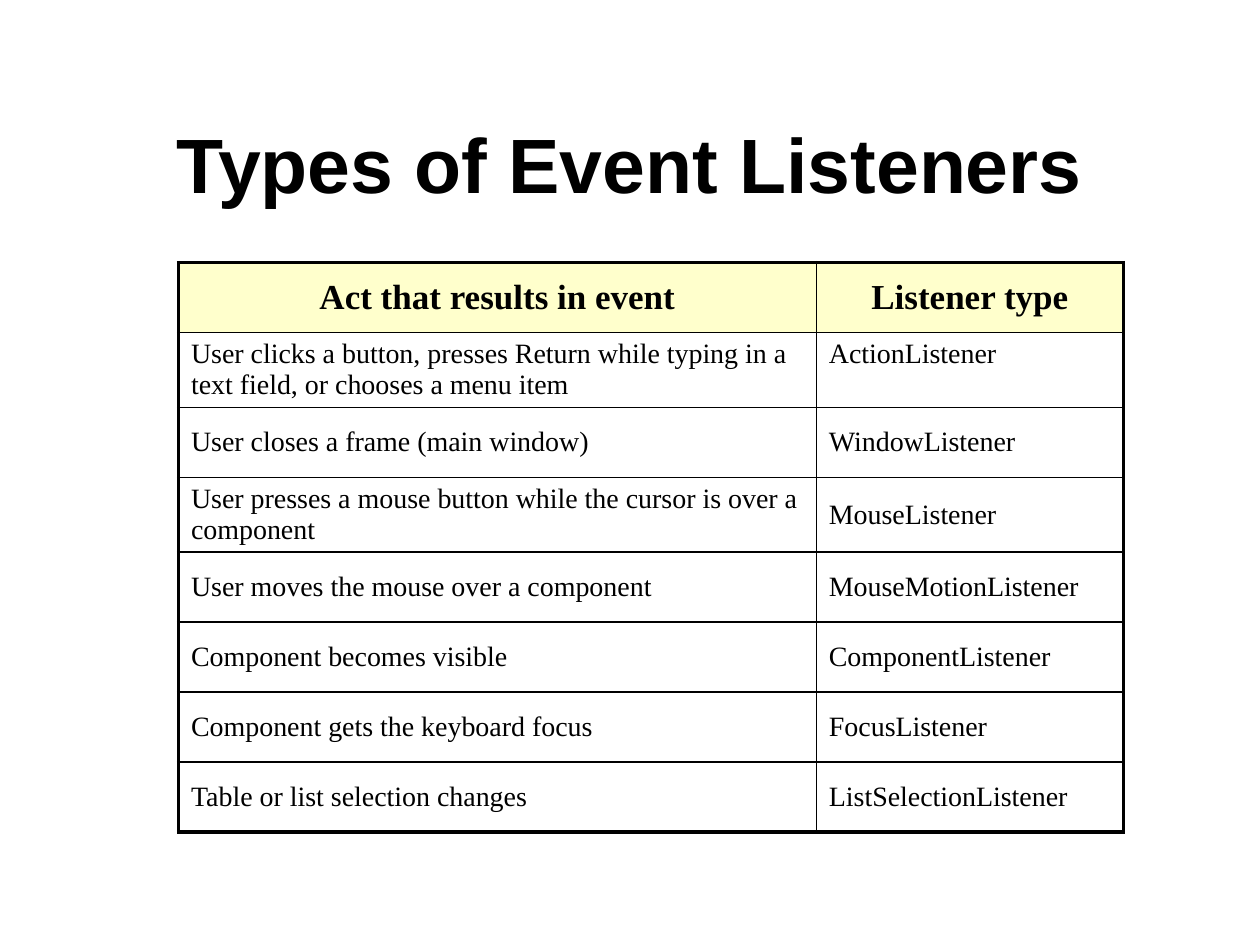
from lxml import etree
from pptx import Presentation, util as u
from pptx.dml.color import RGBColor
from pptx.enum import text
from pptx.oxml.ns import qn

BLACK = RGBColor(0x00, 0x00, 0x00)
WHITE = RGBColor(0xFF, 0xFF, 0xFF)
CREAM = RGBColor(0xFF, 0xFF, 0xCC)
THIN, THICK = 1, 2.25
ROW_HEIGHT = 40  # points

HEADER = ("Act that results in event", "Listener type")
LISTENERS = [
    ("User clicks a button, presses Return while typing in a text field, "
     "or chooses a menu item", "ActionListener"),
    ("User closes a frame (main window)", "WindowListener"),
    ("User presses a mouse button while the cursor is over a component",
     "MouseListener"),
    ("User moves the mouse over a component", "MouseMotionListener"),
    ("Component becomes visible", "ComponentListener"),
    ("Component gets the keyboard focus", "FocusListener"),
    ("Table or list selection changes", "ListSelectionListener"),
]


def write(tf, words, font, size, bold=False, align=text.PP_ALIGN.LEFT):
    tf.text = words
    tf.word_wrap = True
    p = tf.paragraphs[0]
    p.alignment = align
    f = p.runs[0].font
    f.name, f.size, f.bold = font, u.Pt(size), bold
    f.color.rgb = BLACK


def set_borders(cell, widths):
    """Draw the cell's edges; widths maps L, R, T, B to points."""
    tc_pr = cell._tc.get_or_add_tcPr()
    for i, (side, width) in enumerate(widths.items()):
        ln = etree.Element(qn(f"a:ln{side}"), w=str(u.Pt(width)))
        fill = etree.SubElement(ln, qn("a:solidFill"))
        etree.SubElement(fill, qn("a:srgbClr"), val=str(BLACK))
        tc_pr.insert(i, ln)


def add_title(slide, box, words):
    tf = slide.shapes.add_textbox(*box).text_frame
    tf.vertical_anchor = text.MSO_ANCHOR.MIDDLE
    write(tf, words, "Arial", 44, True, text.PP_ALIGN.CENTER)


def add_listener_table(slide, box, rows, shares):
    """Add a framed two-column table; shares are the column widths."""
    table = slide.shapes.add_table(len(rows), len(shares), *box).table
    table.horz_banding = False
    for col, share in zip(table.columns, shares):
        col.width = int(box[2] * share)
    last_row, last_col = len(rows) - 1, len(shares) - 1
    for i, row in enumerate(rows):
        for j, words in enumerate(row):
            cell = table.cell(i, j)
            head = i == 0
            cell.fill.solid()
            cell.fill.fore_color.rgb = CREAM if head else WHITE
            write(cell.text_frame, words, "Times New Roman", 20 if head else 16,
                  head, text.PP_ALIGN.CENTER if head else text.PP_ALIGN.LEFT)
            cell.vertical_anchor = text.MSO_ANCHOR.MIDDLE
            cell.margin_top = cell.margin_bottom = u.Inches(0.03)
            edges = {"L": j == 0, "R": j == last_col,
                     "T": i == 0, "B": i == last_row}
            set_borders(cell, {side: THICK if outer else THIN
                               for side, outer in edges.items()})
    # The first listener lines up with the first line of its two-line act.
    first = table.cell(1, 1)
    first.vertical_anchor = text.MSO_ANCHOR.TOP
    first.margin_top = u.Inches(0.05)


def main():
    prs = Presentation()
    prs.slide_width, prs.slide_height = u.Inches(10), u.Inches(7.5)
    slide = prs.slides.add_slide(prs.slide_layouts[6])

    def box(*points):
        return [u.Pt(n) for n in points]

    add_title(slide, box(54, 48, 612, 90), "Types of Event Listeners")
    rows = [HEADER, *LISTENERS]
    add_listener_table(slide, box(102, 150, 540, ROW_HEIGHT * len(rows)), rows,
                       (0.675, 0.325))
    prs.save("out.pptx")


if __name__ == "__main__":
    main()
